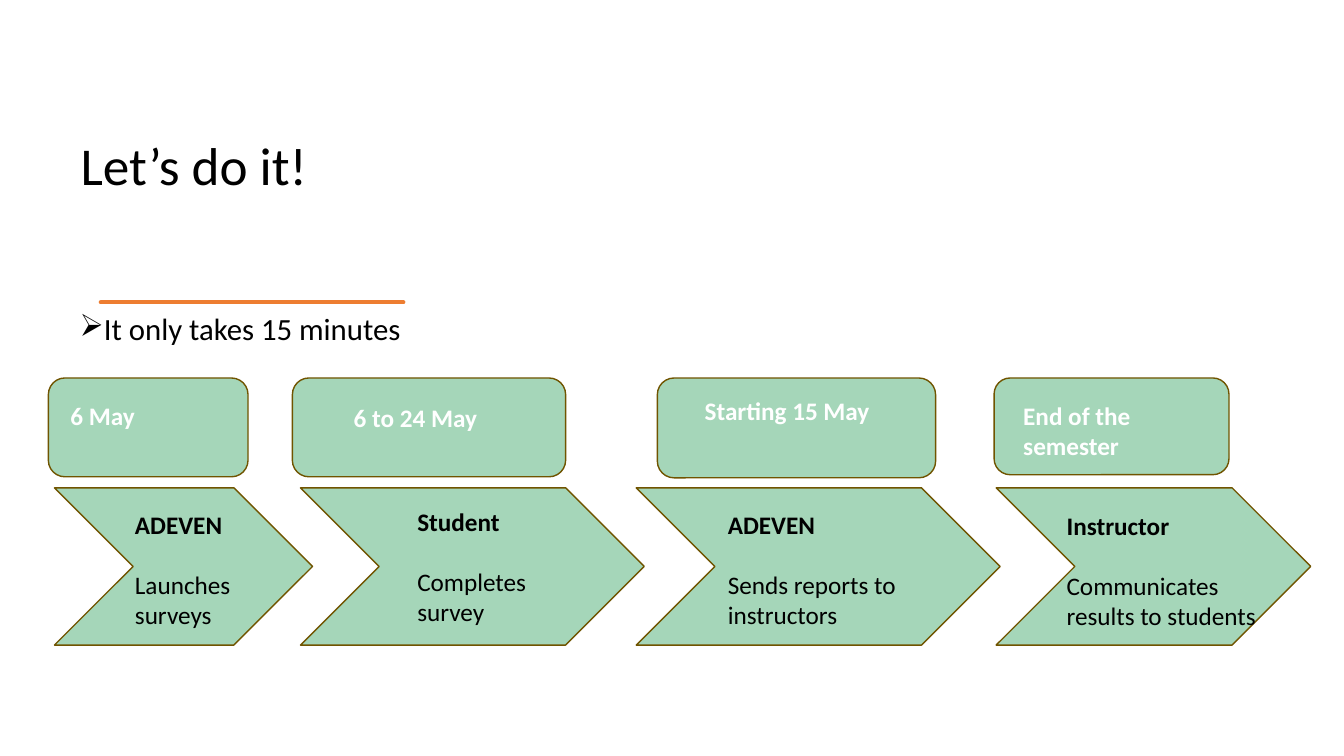
from dataclasses import dataclass

from lxml.etree import SubElement
from pptx import Presentation
from pptx.dml.color import RGBColor
from pptx.enum.shapes import MSO_SHAPE
from pptx.enum.text import MSO_ANCHOR
from pptx.oxml.ns import qn
from pptx.shapes.autoshape import Shape
from pptx.slide import Slide
from pptx.text.text import _Paragraph
from pptx.util import Inches, Pt

BLACK, WHITE, ORANGE = "000000", "FFFFFF", "ED7D31"
GREEN, OLIVE = "A5D6B9", "705400"
CHEVRON_TOP, CHEVRON_HEIGHT, DATE_TOP = 4.84, 1.56, 3.75

Point = tuple[float, float]
Frame = tuple[float, float, float, float]


@dataclass(frozen=True)
class Step:
    actor: str
    action: str
    date: str
    chevron_span: Point
    action_frame: Frame
    date_size: Frame
    date_frame: Frame


STEPS = [
    Step("ADEVEN", "Launches surveys", "6 May", (0.54, 2.56),
         (1.24, 5, 1.6, 1.31), (0.48, DATE_TOP, 1.98, 0.98), (0.6, 3.92, 1.84, 0.4)),
    Step("Student", "Completes survey", "6 to 24 May", (2.98, 3.41),
         (4.04, 4.97, 1.48, 1.31), (2.9, DATE_TOP, 2.71, 0.98), (3.41, 3.94, 1.57, 0.4)),
    Step("ADEVEN", "Sends reports to instructors", "Starting 15 May", (6.31, 3.61),
         (7.12, 5, 2.42, 1.31), (6.52, DATE_TOP, 2.76, 0.99), (6.89, 3.87, 2.02, 0.4)),
    Step("Instructor", "Communicates results to students", "End of the semester", (9.88, 3.12),
         (10.48, 5.01, 2.21, 1.31), (9.86, DATE_TOP, 2.33, 0.96), (10.05, 3.92, 2.05, 0.71)),
]

BRUSH_START: Point = (0.7, 2.81)
BRUSH_CURVES: list[tuple[Point, Point, Point]] = [
    ((0.97, 2.79), (1.21, 2.79), (1.38, 2.81)),
    ((1.55, 2.84), (1.77, 2.82), (2.09, 2.81)),
    ((2.41, 2.81), (2.6, 2.83), (2.84, 2.81)),
    ((3.08, 2.8), (3.39, 2.83), (3.59, 2.81)),
    ((3.79, 2.8), (4.12, 2.82), (4.26, 2.81)),
    ((4.26, 2.82), (4.26, 2.83), (4.26, 2.83)),
    ((4.08, 2.84), (3.64, 2.82), (3.48, 2.83)),
    ((3.32, 2.85), (3.04, 2.8), (2.7, 2.83)),
    ((2.35, 2.86), (2.31, 2.84), (1.99, 2.83)),
    ((1.66, 2.83), (1.32, 2.86), (0.7, 2.83)),
]


def color(value: str) -> RGBColor:
    return RGBColor.from_string(value)


def paint(shape: Shape, fill: str, line: str, width: float) -> None:
    shape.shadow.inherit = False
    shape.fill.solid()
    shape.fill.fore_color.rgb = color(fill)
    shape.line.color.rgb = color(line)
    shape.line.width = Pt(width)


def add_box(page: Slide, frame: Frame, anchor: MSO_ANCHOR = MSO_ANCHOR.TOP) -> Shape:
    box = page.shapes.add_textbox(*map(Inches, frame))
    box.text_frame.word_wrap = True
    box.text_frame.vertical_anchor = anchor
    return box


def write(para: _Paragraph, text: str, *, size: float = 18, ink: str = BLACK, bold: bool = False,
          line_spacing: float = 1, before: float = 0) -> None:
    para.line_spacing = line_spacing
    para.space_before = Pt(before)
    span = para.add_run()
    span.text = text
    span.font.name = "Calibri"
    span.font.size = Pt(size)
    span.font.bold = bold
    span.font.color.rgb = color(ink)


def add_bullet(para: _Paragraph, symbol: str, margin: float, indent: float) -> None:
    properties = para._p.get_or_add_pPr()
    properties.set("marL", str(Inches(margin)))
    properties.set("indent", str(Inches(indent)))
    SubElement(properties, qn("a:buChar")).set("char", symbol)


def add_panel(page: Slide, kind: MSO_SHAPE, frame: Frame) -> None:
    paint(page.shapes.add_shape(kind, *map(Inches, frame)), GREEN, OLIVE, 1)


def curve_points(start: Point, curve: tuple[Point, Point, Point], count: int = 10) -> list[Point]:
    first, second, end = curve
    points = []
    for index in range(1, count + 1):
        t = index / count
        u = 1 - t
        weights = (u ** 3, 3 * u * u * t, 3 * u * t * t, t ** 3)
        corners = (start, first, second, end)
        points.append((sum(w * x for w, (x, _) in zip(weights, corners)),
                       sum(w * y for w, (_, y) in zip(weights, corners))))
    return points


def add_brush_stroke(page: Slide) -> None:
    starts = [BRUSH_START] + [curve[2] for curve in BRUSH_CURVES]
    points = [point for start, curve in zip(starts, BRUSH_CURVES)
              for point in curve_points(start, curve)]
    builder = page.shapes.build_freeform(*BRUSH_START, scale=Inches(1))
    builder.add_line_segments(points, close=True)
    paint(builder.convert_to_shape(), ORANGE, ORANGE, 3)


def add_step(page: Slide, step: Step) -> None:
    left, width = step.chevron_span
    add_panel(page, MSO_SHAPE.CHEVRON, (left, CHEVRON_TOP, width, CHEVRON_HEIGHT))
    add_panel(page, MSO_SHAPE.ROUNDED_RECTANGLE, step.date_size)
    action = add_box(page, step.action_frame).text_frame
    write(action.paragraphs[0], step.actor, bold=True)
    write(action.add_paragraph(), step.action, before=21.6)
    date = add_box(page, step.date_frame).text_frame
    write(date.paragraphs[0], step.date, ink=WHITE, bold=True)


def main() -> None:
    deck = Presentation()
    deck.slide_width, deck.slide_height = Inches(13.33), Inches(7.5)
    page = deck.slides.add_slide(deck.slide_layouts[6])

    title = add_box(page, (0.7, 0.7, 4.28, 1.29), MSO_ANCHOR.BOTTOM)
    write(title.text_frame.paragraphs[0], "Let’s do it!", size=38)
    add_brush_stroke(page)

    note = add_box(page, (0.69, 3.07, 3.75, 3.73)).text_frame.paragraphs[0]
    write(note, "It only takes 15 minutes", size=22, line_spacing=0.9)
    add_bullet(note, "➢", 0.12, -0.38)

    for step in STEPS:
        add_step(page, step)
    deck.save("out.pptx")


if __name__ == "__main__":
    main()
